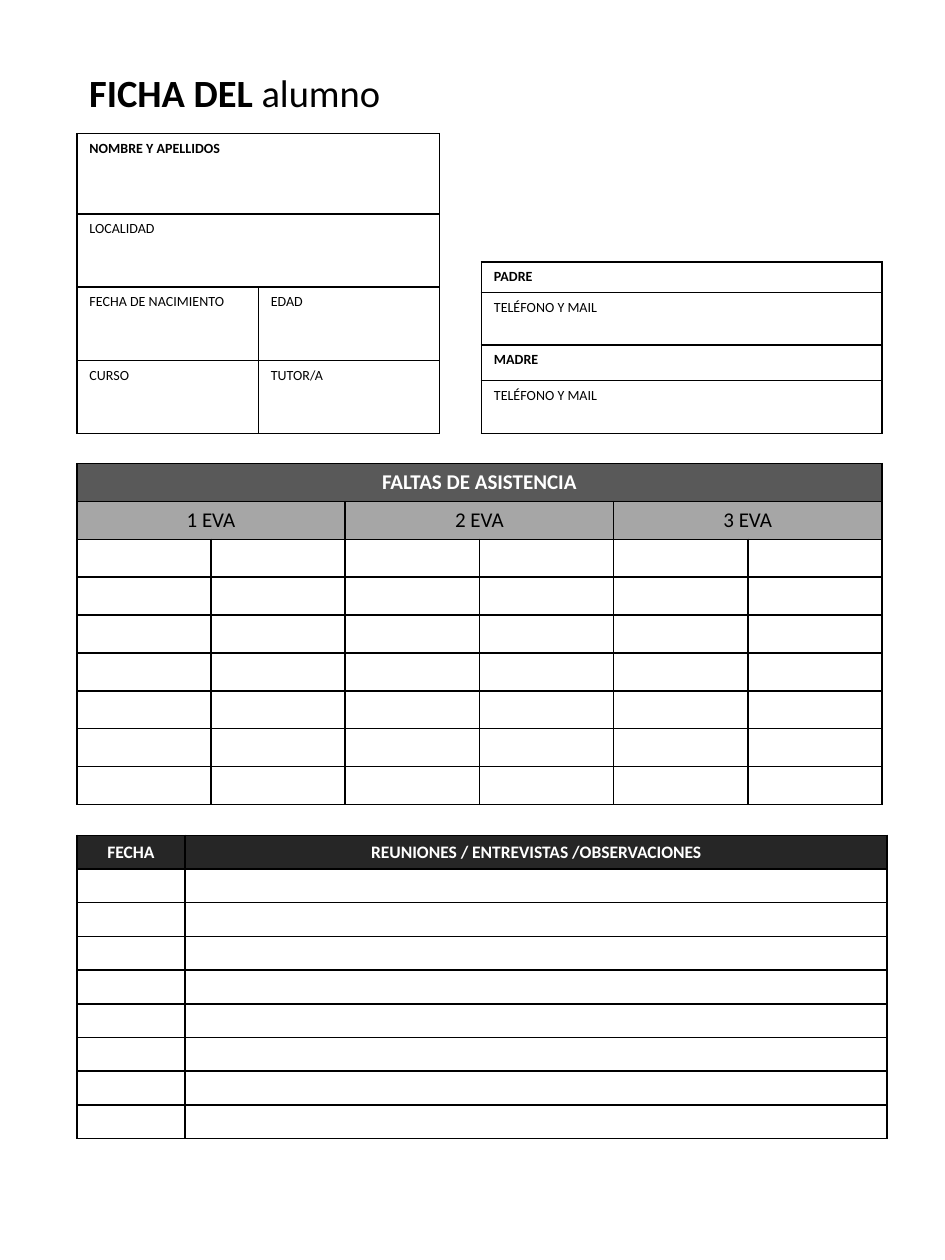
from dataclasses import dataclass
from lxml import etree
from pptx import Presentation, util as u
from pptx.dml.color import RGBColor
from pptx.enum import text as t
from pptx.oxml import ns

# The page is a grid of 750 columns by 1000 rows
COLUMNS, ROWS = 750, 1000
PAGE_WIDTH, PAGE_HEIGHT = u.Inches(7.5), u.Inches(10)
LEFT = 61
FONT = "Calibri"
BLACK, WHITE = "000000", "FFFFFF"


@dataclass(frozen=True)
class Cell:
    row: int
    col: int
    label: str
    bold: bool = False
    span: int = 1
    color: str = BLACK
    fill: str = ""


@dataclass(frozen=True)
class Form:
    left: int
    top: int
    cols: list[int]
    rows: list[int]
    size: int
    cells: list[Cell]
    align: t.PP_ALIGN = t.PP_ALIGN.LEFT
    fill: str = ""


def across(columns: float) -> int:
    return round(PAGE_WIDTH * columns / COLUMNS)


def down(rows: float) -> int:
    return round(PAGE_HEIGHT * rows / ROWS)


def rgb(color: str) -> RGBColor:
    return RGBColor.from_string(color)


def write(paragraph, wording: str, *, size: int, bold: bool = False,
          color: str = BLACK, align: t.PP_ALIGN = t.PP_ALIGN.LEFT) -> None:
    paragraph.alignment = align
    run = paragraph.add_run()
    run.text = wording
    run.font.name, run.font.size, run.font.bold = FONT, u.Pt(size), bold
    run.font.color.rgb = rgb(color)


def paint(cell, color: str) -> None:
    if color:
        cell.fill.solid()
        cell.fill.fore_color.rgb = rgb(color)
    else:
        cell.fill.background()


def outline(cell, width: float = 1) -> None:
    properties = cell._tc.get_or_add_tcPr()
    for position, side in enumerate(("lnL", "lnR", "lnT", "lnB")):
        line = etree.Element(ns.qn(f"a:{side}"), w=str(u.Pt(width)))
        solid = etree.SubElement(line, ns.qn("a:solidFill"))
        etree.SubElement(solid, ns.qn("a:srgbClr"), val=BLACK)
        properties.insert(position, line)


def size_empty(cell, size: int) -> None:
    """Keep the row height of a blank cell in step with its text size."""
    paragraph = cell.text_frame.paragraphs[0]._p
    etree.SubElement(paragraph, ns.qn("a:endParaRPr"), sz=str(size * 100))


def draw_form(slide, form: Form) -> None:
    table = slide.shapes.add_table(
        len(form.rows), len(form.cols), across(form.left), down(form.top),
        across(sum(form.cols)), down(sum(form.rows))).table
    table.first_row = table.horz_banding = False
    for column, width in zip(table.columns, form.cols):
        column.width = across(width)
    for row, height in zip(table.rows, form.rows):
        row.height = down(height)
    for cell in table.iter_cells():
        paint(cell, form.fill)
        outline(cell)
    # Labelled cells
    for item in form.cells:
        cell = table.cell(item.row, item.col)
        if item.span > 1:
            cell.merge(table.cell(item.row, item.col + item.span - 1))
        paint(cell, item.fill or form.fill)
        write(cell.text_frame.paragraphs[0], item.label, size=form.size,
              bold=item.bold, color=item.color, align=form.align)
    # Blank cells
    for cell in table.iter_cells():
        if not cell.text_frame.text:
            size_empty(cell, form.size)


def draw_title(slide) -> None:
    box = slide.shapes.add_textbox(across(LEFT), down(50), across(268), down(47))
    box.text_frame.word_wrap = False
    heading = box.text_frame.paragraphs[0]
    write(heading, "FICHA DEL ", size=22, bold=True)
    write(heading, "alumno", size=22)


student = Form(LEFT, 106, [144] * 2, [64] + [58] * 3, 8, [
    Cell(0, 0, "NOMBRE Y APELLIDOS", bold=True, span=2),
    Cell(1, 0, "LOCALIDAD", span=2),
    Cell(2, 0, "FECHA DE NACIMIENTO"), Cell(2, 1, "EDAD"),
    Cell(3, 0, "CURSO"), Cell(3, 1, "TUTOR/A"),
])

parents = Form(382, 208, [318], [24, 42, 28, 42], 8, [
    Cell(0, 0, "PADRE", bold=True), Cell(1, 0, "TELÉFONO Y MAIL"),
    Cell(2, 0, "MADRE", bold=True), Cell(3, 0, "TELÉFONO Y MAIL"),
])

HEADER = {"bold": True, "color": WHITE, "fill": "262626"}
meetings = Form(LEFT, 663, [86, 557], [26] * 9, 10, [
    Cell(0, 0, "FECHA", **HEADER),
    Cell(0, 1, "REUNIONES / ENTREVISTAS /OBSERVACIONES", **HEADER),
], t.PP_ALIGN.CENTER, WHITE)

absences = Form(LEFT, 368, [106.5] * 6, [30] * 9, 12, [
    Cell(0, 0, "FALTAS DE ASISTENCIA", bold=True, span=6, color=WHITE, fill="595959"),
    *(Cell(1, 2 * term, f"{term + 1} EVA", span=2, fill="A6A6A6") for term in range(3)),
], t.PP_ALIGN.CENTER)


def main() -> None:
    deck = Presentation()
    deck.slide_width, deck.slide_height = PAGE_WIDTH, PAGE_HEIGHT
    slide = deck.slides.add_slide(deck.slide_layouts[6])
    draw_form(slide, student)
    draw_form(slide, parents)
    draw_title(slide)
    draw_form(slide, meetings)
    draw_form(slide, absences)
    deck.save("out.pptx")


if __name__ == "__main__":
    main()
